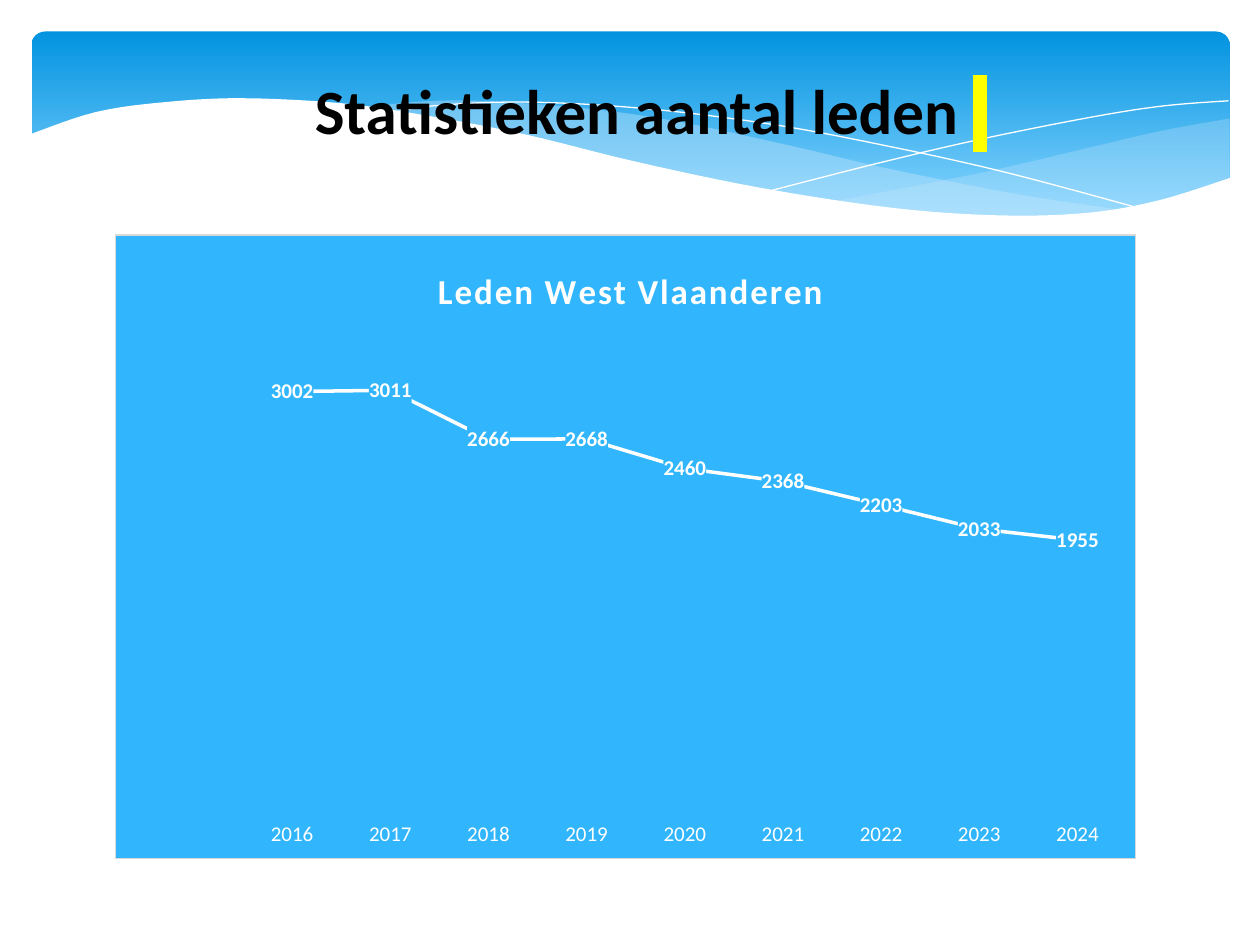
import pptx
import pptx.chart.data
import pptx.dml.color
import pptx.enum.chart
import pptx.enum.dml
import pptx.enum.shapes
import pptx.oxml
import pptx.oxml.ns
import pptx.util
from pptx.util import Inches

RGBColor = pptx.dml.color.RGBColor
WHITE = RGBColor(0xFF, 0xFF, 0xFF)
BLACK = RGBColor(0x00, 0x00, 0x00)
YELLOW = RGBColor(0xFF, 0xFF, 0x00)
DEEP_BLUE = RGBColor(0x02, 0x93, 0xE0)
LIGHT_BLUE = RGBColor(0x83, 0xD3, 0xFE)
PALE_BLUE = RGBColor(0xC6, 0xE7, 0xFC)
CHART_BLUE = RGBColor(0x31, 0xB6, 0xFD)
BORDER_GREY = RGBColor(0xD9, 0xD9, 0xD9)

MEMBERS = {"": None, "2016": 3002, "2017": 3011, "2018": 2666, "2019": 2668,
           "2020": 2460, "2021": 2368, "2022": 2203, "2023": 2033, "2024": 1955}


def smooth(knots, steps=6):
    """Return points on a Catmull-Rom curve through the knots."""
    padded = [knots[0], *knots, knots[-1]]
    points = [knots[0]]
    for a, b, c, d in zip(padded, padded[1:], padded[2:], padded[3:]):
        for step in range(1, steps + 1):
            t = step / steps
            points.append(tuple(
                0.5 * (2 * q + (r - p) * t + (2 * p - 5 * q + 4 * r - s) * t ** 2
                       + (3 * q - p - 3 * r + s) * t ** 3)
                for p, q, r, s in zip(a, b, c, d)))
    return points


def chart_layout(x, y, w=None, h=None):
    """Return a manual layout, in fractions of the chart."""
    sizes = "" if w is None else f'<c:w val="{w}"/><c:h val="{h}"/>'
    target = "" if w is None else '<c:layoutTarget val="inner"/>'
    return pptx.oxml.parse_xml(
        f'<c:layout {pptx.oxml.ns.nsdecls("c")}><c:manualLayout>{target}'
        '<c:xMode val="edge"/><c:yMode val="edge"/>'
        f'<c:x val="{x}"/><c:y val="{y}"/>{sizes}</c:manualLayout></c:layout>')


def shape_fill(color, border=None):
    line = "<a:noFill/>" if border is None else (
        f'<a:solidFill><a:srgbClr val="{border}"/></a:solidFill>')
    return pptx.oxml.parse_xml(
        f'<c:spPr {pptx.oxml.ns.nsdecls("c", "a")}><a:solidFill><a:srgbClr val="{color}"/>'
        f'</a:solidFill><a:ln w="9525">{line}</a:ln></c:spPr>')


class Deck:
    font_name = "Calibri"

    def __init__(self):
        self.presentation = pptx.Presentation()
        self.presentation.slide_width = Inches(10)
        self.presentation.slide_height = Inches(7.5)
        self.slide = self.presentation.slides.add_slide(self.presentation.slide_layouts[6])

    def style(self, font, size, color, bold=False):
        font.name, font.size, font.bold = self.font_name, pptx.util.Pt(size), bold
        font.color.rgb = color

    def banner(self, left, top, width, height):
        banner = self.slide.shapes.add_shape(
            pptx.enum.shapes.MSO_SHAPE.ROUNDED_RECTANGLE,
            Inches(left), Inches(top), Inches(width), Inches(height))
        banner.adjustments[0] = 0.07
        banner.shadow.inherit = False
        banner.line.fill.background()
        banner.fill.gradient()
        banner.fill.gradient_angle = 270
        for stop, color, position in zip(
                banner.fill.gradient_stops, (DEEP_BLUE, LIGHT_BLUE), (0, 0.9)):
            stop.color.rgb, stop.position = color, position

    def outline(self, points, closed):
        (x, y), *rest = [(Inches(x), Inches(y)) for x, y in points]
        builder = self.slide.shapes.build_freeform(x, y)
        builder.add_line_segments(rest, close=closed)
        outline = builder.convert_to_shape()
        outline.shadow.inherit = False
        return outline

    def wave(self, points, color, opacity=100):
        wave = self.outline(points, True)
        wave.line.fill.background()
        wave.fill.solid()
        wave.fill.fore_color.rgb = color
        if opacity < 100:
            rgb = wave.fill._xPr.find(".//" + pptx.oxml.ns.qn("a:srgbClr"))
            rgb.append(pptx.oxml.parse_xml(
                f'<a:alpha {pptx.oxml.ns.nsdecls("a")} val="{opacity * 1000}"/>'))

    def hairline(self, points):
        hairline = self.outline(points, False)
        hairline.fill.background()
        hairline.line.color.rgb = WHITE
        hairline.line.width = pptx.util.Pt(0)

    def title(self, text, left, top, width, height):
        """Add the title, ending in a highlighted space."""
        box = self.slide.shapes.add_textbox(
            Inches(left), Inches(top), Inches(width), Inches(height))
        box.text_frame.word_wrap = True
        paragraph = box.text_frame.paragraphs[0]
        for part in (text, " "):
            run = paragraph.add_run()
            run.text = part
            self.style(run.font, 36, BLACK, True)
        fill = run.font._element.find(pptx.oxml.ns.qn("a:solidFill"))
        fill.addnext(pptx.oxml.parse_xml(
            f'<a:highlight {pptx.oxml.ns.nsdecls("a")}><a:srgbClr val="{YELLOW}"/></a:highlight>'))

    def line_chart(self, heading, values, left, top, width, height):
        data = pptx.chart.data.CategoryChartData()
        data.categories = list(values)
        data.add_series("Series 1", list(values.values()))
        chart = self.slide.shapes.add_chart(
            pptx.enum.chart.XL_CHART_TYPE.LINE, Inches(left), Inches(top),
            Inches(width), Inches(height), data).chart
        self.style(chart.font, 10, BLACK)
        chart.has_legend = False
        chart._chartSpace.chart.addnext(shape_fill(CHART_BLUE, BORDER_GREY))
        chart._chartSpace.chart.plotArea.insert(0, chart_layout(0.029, 0.138, 0.962, 0.796))
        for old in chart._chartSpace.chart.plotArea.findall(pptx.oxml.ns.qn("c:layout"))[1:]:
            chart._chartSpace.chart.plotArea.remove(old)

        frame = chart.chart_title.text_frame
        frame.text = heading
        run = frame.paragraphs[0].runs[0]
        self.style(run.font, 20, WHITE, True)
        run.font._element.set("spc", "100")
        title = chart.chart_title._element
        for old in title.findall(pptx.oxml.ns.qn("c:layout")):
            title.remove(old)
        title.find(pptx.oxml.ns.qn("c:tx")).addnext(chart_layout(0.31, 0.04))

        chart.value_axis.minimum_scale, chart.value_axis.maximum_scale = 0, 3500
        chart.value_axis.has_major_gridlines = False
        chart.value_axis.visible = False
        years = chart.category_axis
        years.major_tick_mark = pptx.enum.chart.XL_TICK_MARK.NONE
        years.format.line.fill.background()
        self.style(years.tick_labels.font, 12, WHITE)

        plot = chart.plots[0]
        plot.vary_by_categories = False
        members = plot.series[0]
        members.smooth = False
        members.marker.style = pptx.enum.chart.XL_MARKER_STYLE.NONE
        members.format.line.color.rgb = WHITE
        members.format.line.width = pptx.util.Pt(2)
        labels = members.data_labels
        labels.show_value = True
        labels.position = pptx.enum.chart.XL_LABEL_POSITION.CENTER
        self.style(labels.font, 12, WHITE, True)
        labels._element.find(pptx.oxml.ns.qn("c:txPr")).addprevious(shape_fill(CHART_BLUE))


def main():
    deck = Deck()
    deck.banner(0.25, 0.25, 9.51, 1.56)
    right_crest = smooth([(9.76, 0.94), (9.21, 1.04), (8.61, 1.18), (7.79, 1.37), (6.61, 1.6)])
    right_trough = smooth([(6.61, 1.6), (7.32, 1.68), (8.14, 1.72), (8.81, 1.67),
                           (9.35, 1.56), (9.76, 1.41)])
    deck.wave(right_crest + right_trough[1:], PALE_BLUE, 29)
    middle_crest = smooth([(8.93, 1.67), (8.07, 1.54), (7.06, 1.34), (6.29, 1.16), (5.41, 0.97),
                           (4.65, 0.86), (3.8, 0.8), (3.28, 0.81), (2.86, 0.86)])
    middle_trough = smooth([(2.86, 0.86), (3.62, 0.97), (4.49, 1.16), (5.66, 1.43), (6.5, 1.58),
                            (7.36, 1.69), (8.18, 1.73), (8.93, 1.67)])
    deck.wave(middle_crest + middle_trough[1:], PALE_BLUE, 40)
    deck.hairline(smooth([(3.09, 0.9), (3.44, 0.84), (4.16, 0.81), (5.1, 0.86), (6.08, 0.98),
                          (6.95, 1.14), (7.95, 1.36), (9.07, 1.66)]))
    deck.hairline(smooth([(6.13, 1.51), (6.95, 1.3), (7.76, 1.11), (8.66, 0.93),
                          (9.24, 0.84), (9.75, 0.8)]))
    front_crest = smooth([(9.77, 1.41), (9.2, 1.59), (8.63, 1.69), (7.93, 1.71), (7.08, 1.65),
                          (6.03, 1.49), (5.03, 1.28), (4.18, 1.07), (3.4, 0.92), (2.71, 0.82),
                          (1.93, 0.78), (1.32, 0.81), (0.76, 0.89), (0.23, 1.07)])
    deck.wave(front_crest + [(0.23, 2.24), (9.77, 2.24)], WHITE)
    deck.title("Statistieken aantal leden ", 2.4, 0.52, 6, 0.71)
    deck.line_chart("Leden West Vlaanderen", MEMBERS, 0.91, 1.86, 8.11, 4.96)
    deck.presentation.save("out.pptx")


if __name__ == "__main__":
    main()
